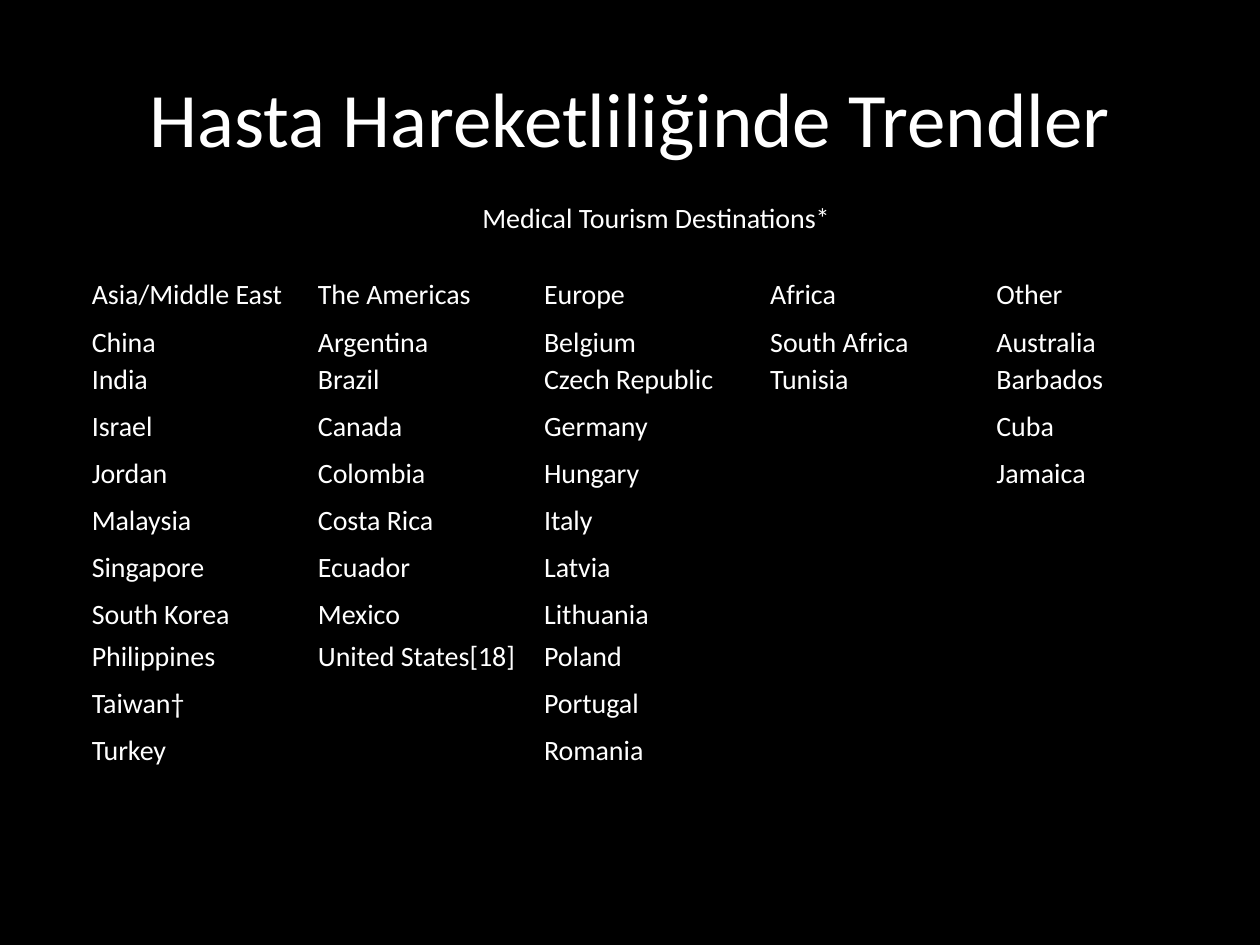
from itertools import zip_longest

from pptx import Presentation
from pptx.dml.color import RGBColor
from pptx.enum import text
from pptx.util import Cm, Pt

BLACK = RGBColor(0x00, 0x00, 0x00)
WHITE = RGBColor(0xFF, 0xFF, 0xFF)
FONT = "Calibri"
PLAIN_TABLE_STYLE = "{2D5ABB26-0587-4C30-8999-92F81FD0307C}"  # no style, no grid

TITLE = "Hasta Hareketliliğinde Trendler"
TABLE_HEADING = "Medical Tourism Destinations*"
DESTINATIONS = {
    "Asia/Middle East": ["China", "India", "Israel", "Jordan", "Malaysia", "Singapore",
                         "South Korea", "Philippines", "Taiwan†", "Turkey"],
    "The Americas": ["Argentina", "Brazil", "Canada", "Colombia", "Costa Rica",
                     "Ecuador", "Mexico", "United States[18]"],
    "Europe": ["Belgium", "Czech Republic", "Germany", "Hungary", "Italy", "Latvia",
               "Lithuania", "Poland", "Portugal", "Romania"],
    "Africa": ["South Africa", "Tunisia"],
    "Other": ["Australia", "Barbados", "Cuba", "Jamaica"],
}
COLUMN_WIDTH = 4.56
ROW_HEIGHT = 0.95
SPECIAL_ROW_HEIGHTS = {0: 0.81, 1: 1.55, 3: 0.75, 9: 0.83}


def write(paragraph, words, size, alignment):
    paragraph.alignment = alignment
    run = paragraph.add_run()
    run.text = words
    run.font.name = FONT
    run.font.size = Pt(size)
    run.font.color.rgb = WHITE


def add_title(slide):
    box = slide.shapes.add_textbox(Cm(1.27), Cm(0.76), Cm(22.86), Cm(3.18))
    frame = box.text_frame
    frame.word_wrap = True
    frame.vertical_anchor = text.MSO_ANCHOR.MIDDLE
    write(frame.paragraphs[0], TITLE, 44, text.PP_ALIGN.CENTER)


def add_plain_table(slide, row_count, column_count):
    """Add a table without banding, grid or fills, and size its rows and columns."""
    heights = [SPECIAL_ROW_HEIGHTS.get(row, ROW_HEIGHT) for row in range(row_count)]
    frame = slide.shapes.add_table(
        row_count, column_count, Cm(1.83), Cm(3.94),
        Cm(COLUMN_WIDTH * column_count), Cm(sum(heights)))
    table = frame.table
    table.first_row = table.horz_banding = False
    table._tbl.tblPr[0].text = PLAIN_TABLE_STYLE
    for column in table.columns:
        column.width = Cm(COLUMN_WIDTH)
    for row, height in zip(table.rows, heights):
        row.height = Cm(height)
    for cell in table.iter_cells():
        cell.fill.background()
        cell.vertical_anchor = text.MSO_ANCHOR.BOTTOM
        cell.margin_left = cell.margin_right = cell.margin_top = Cm(0.02)
        cell.margin_bottom = 0
    return table


def add_destinations(slide):
    rows = [list(DESTINATIONS), *zip_longest(*DESTINATIONS.values())]
    table = add_plain_table(slide, len(rows) + 1, len(DESTINATIONS))
    heading = table.cell(0, 0)
    heading.merge(table.cell(0, len(DESTINATIONS) - 1))
    write(heading.text_frame.paragraphs[0], TABLE_HEADING, 16, text.PP_ALIGN.CENTER)
    for row_index, names in enumerate(rows, start=1):
        for column_index, name in enumerate(names):
            if name:
                cell = table.cell(row_index, column_index)
                write(cell.text_frame.paragraphs[0], name, 16, text.PP_ALIGN.LEFT)


def main():
    presentation = Presentation()
    presentation.slide_width = Cm(25.4)
    presentation.slide_height = Cm(19.05)
    slide = presentation.slides.add_slide(presentation.slide_layouts[6])
    slide.background.fill.solid()
    slide.background.fill.fore_color.rgb = BLACK
    add_title(slide)
    add_destinations(slide)
    presentation.save("out.pptx")


if __name__ == "__main__":
    main()
